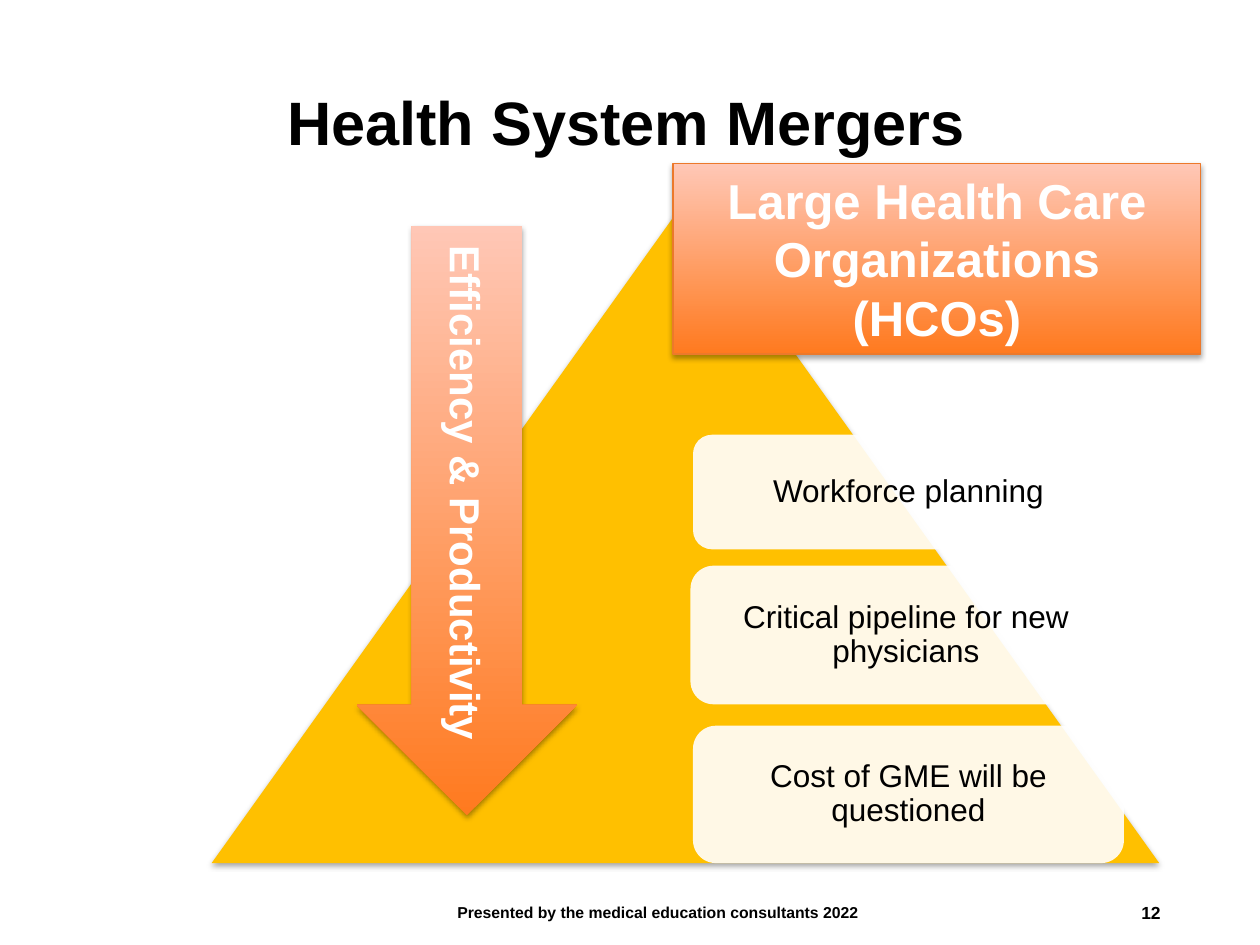
"""Build the Health System Mergers slide with its pyramid, arrow and cards."""
from lxml.etree import SubElement
from pptx import Presentation
from pptx.dml.color import RGBColor
from pptx.enum.shapes import MSO_SHAPE as SHAPE
from pptx.enum.text import MSO_ANCHOR as ANCHOR, MSO_AUTO_SIZE as AUTO, PP_ALIGN as ALIGN
from pptx.oxml.ns import qn
from pptx.util import Pt

PX = 9144
BLACK, WHITE, AMBER, ORANGE, PEACH, RUST = (
    "000000", "FFFFFF", "FFC000", "FF7A1F", "FFC7B6", "EC792B")


def rgb(value):
    return RGBColor.from_string(value)


def write(holder, words, size, color, bold, align, spacing=1.0, inset=(10, 5)):
    frame = holder.text_frame
    frame.word_wrap = True
    frame.vertical_anchor = ANCHOR.MIDDLE
    frame.margin_left = frame.margin_right = inset[0] * PX
    frame.margin_top = frame.margin_bottom = inset[1] * PX
    line = frame.paragraphs[0]
    line.alignment = align
    line.line_spacing = spacing
    run = line.add_run()
    run.text = words
    run.font.name, run.font.size, run.font.bold = "Arial", Pt(size), bold
    run.font.color.rgb = rgb(color)


deck = Presentation()
deck.slide_width, deck.slide_height = 1000 * PX, 750 * PX
slide = deck.slides.add_slide(deck.slide_layouts[6])
shapes = slide.shapes

for words, box, size, align, spacing in [
    ("Health System Mergers", (218, 27, 714, 145), 35, ALIGN.LEFT, 0.9),
    ("12", (706, 704, 225, 40), 10, ALIGN.RIGHT, 1.0),
    ("Presented by the medical education consultants 2022",
     (331, 704, 382, 40), 9, ALIGN.CENTER, 1.0),
]:
    label = shapes.add_textbox(*(n * PX for n in box))
    write(label, words, size, BLACK, True, align, spacing)

pyramid = shapes.add_shape(SHAPE.ISOSCELES_TRIANGLE, 168 * PX, 159 * PX, 752 * PX, 526 * PX)
pyramid.fill.solid()
pyramid.fill.fore_color.rgb = rgb(AMBER)
pyramid.line.fill.background()

for words, left, top, height in [
    ("Workforce planning", 550, 345, 91),
    ("Critical pipeline for new physicians", 548, 449, 110),
    ("Cost of GME will be questioned", 550, 576, 109),
]:
    card = shapes.add_shape(SHAPE.ROUNDED_RECTANGLE, left * PX, top * PX, 342 * PX, height * PX)
    card.shadow.inherit = False
    card.fill.solid()
    card.fill.fore_color.rgb = rgb(WHITE)
    tint = card.fill._xPr.find(qn("a:solidFill"))[0]
    SubElement(tint, qn("a:alpha"), val="90000")
    card.line.fill.background()
    write(card, words, 18, BLACK, False, ALIGN.CENTER, 0.9, (7, 7))

organizations = shapes.add_shape(SHAPE.RECTANGLE, 534 * PX, 130 * PX, 419 * PX, 151 * PX)
organizations.line.color.rgb = rgb(RUST)
organizations.line.width = Pt(0.75)
write(organizations, "Large Health Care Organizations (HCOs)", 28, WHITE, True, ALIGN.CENTER)
organizations.text_frame.vertical_anchor = ANCHOR.TOP
organizations.text_frame.auto_size = AUTO.SHAPE_TO_FIT_TEXT

efficiency = shapes.add_shape(SHAPE.DOWN_ARROW, 283 * PX, 179 * PX, 175 * PX, 468 * PX)
efficiency.line.fill.background()
write(efficiency, "Efficiency & Productivity", 24, WHITE, True, ALIGN.CENTER)
efficiency.text_frame._txBody.bodyPr.set("vert", "vert")

for banner in (organizations, efficiency):
    banner.fill.gradient()
    banner.fill.gradient_angle = 90
    for stop, color in zip(banner.fill.gradient_stops, (ORANGE, PEACH)):
        stop.color.rgb = rgb(color)

for raised in (pyramid, organizations, efficiency):
    raised.shadow.inherit = False
    effects = raised._element.spPr.find(qn("a:effectLst"))
    shade = SubElement(effects, qn("a:outerShdw"), blurRad=str(Pt(3.1)),
                       dist=str(Pt(1.8)), dir="5400000", rotWithShape="0")
    ink = SubElement(shade, qn("a:srgbClr"), val=BLACK)
    SubElement(ink, qn("a:alpha"), val="35000")

deck.save("out.pptx")
